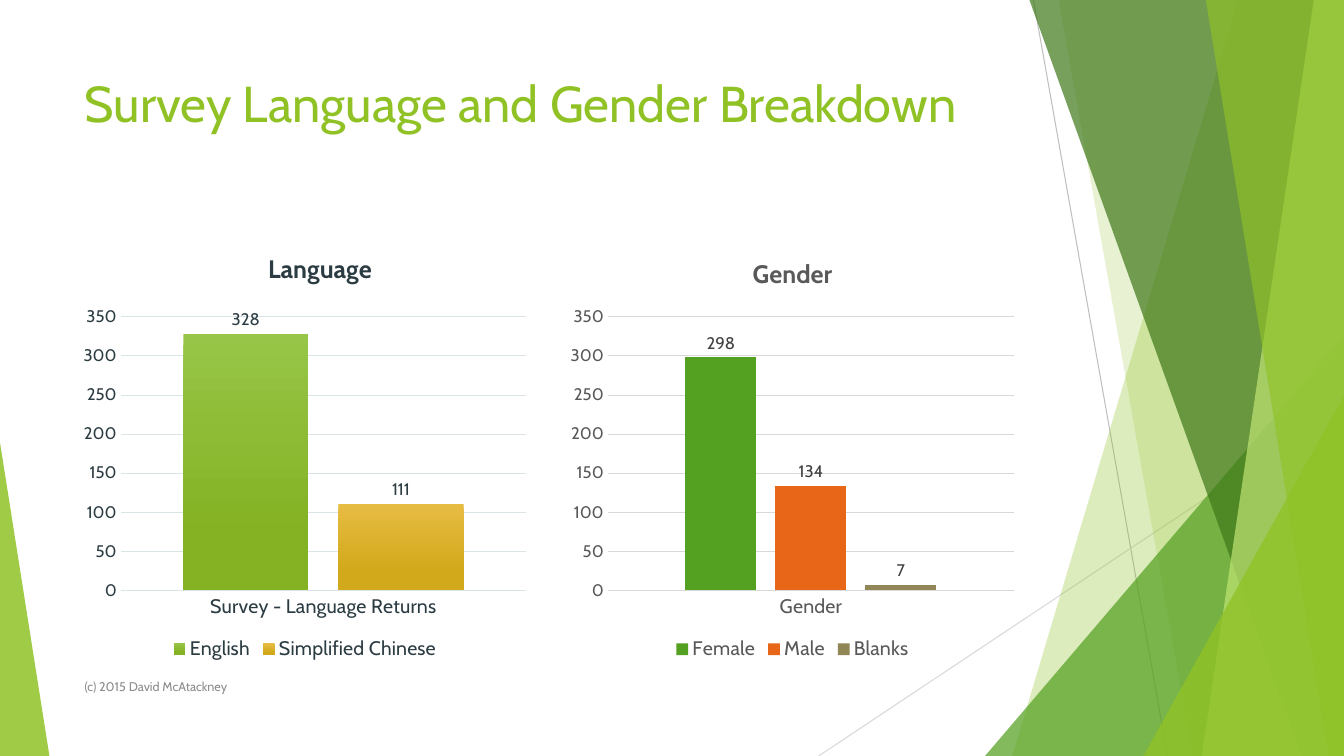
from lxml import etree
from pptx import Presentation, util as u
from pptx.chart.data import CategoryChartData
from pptx.dml.color import RGBColor
from pptx.enum import chart as ch, shapes, text
from pptx.oxml.ns import qn

FONT = "Cabin"
COLORS = {
    "lime": "90C226", "green": "54A021", "forest": "3F7819", "pale": "C0E474",
    "line_dark": "BFBFBF", "line": "D9D9D9", "grid_blue": "DBE4E7",
    "slate": "2C3C43", "gray": "595959", "label": "404040", "footer": "8C8C8C",
    "lime_top": "97C547", "lime_low": "84B223", "gold_top": "E7BC43",
    "gold_low": "D2A91B", "orange": "E76618", "olive": "918655",
}


def rgb(name):
    """Return the named palette colour."""
    return RGBColor.from_string(COLORS[name])


def set_font(font, color, **fmt):
    """Apply the deck font, a colour and further format values."""
    for key, value in {"name": FONT, **fmt}.items():
        setattr(font, key, value)
    font.color.rgb = rgb(color)


def add_text(s, box, words, color, size, anchor):
    """Place one line of text in the box."""
    tf = s.shapes.add_textbox(*map(u.Inches, box)).text_frame
    for key, value in {"word_wrap": True, "vertical_anchor": anchor}.items():
        setattr(tf, key, value)
    r = tf.paragraphs[0].add_run()
    r.text = words
    set_font(r.font, color, size=u.Pt(size))


def paint(sp, color, alpha):
    """Fill a facet with a see-through colour and no outline."""
    sp.shadow.inherit = False
    sp.line.fill.background()
    sp.fill.solid()
    sp.fill.fore_color.rgb = rgb(color)
    clr = sp._element.spPr.find(".//" + qn("a:srgbClr"))
    etree.SubElement(clr, qn("a:alpha")).set("val", str(alpha * 1000))


def add_facets(s, box):
    """Draw the thin lines and overlapping green facets at the slide edges."""
    x, y, w, h = box
    for x1, y1, x2, color in ((10.25, 0, 11.58, "line_dark"), (w, 4.03, 8.12, "line")):
        line = s.shapes.add_connector(
            shapes.MSO_CONNECTOR.STRAIGHT,
            *map(u.Inches, (x + x1, y + y1, x + x2, y + h)))
        line.line.color.rgb = rgb(color)
        line.line.width = u.Pt(0.75)
        etree.SubElement(line._element.spPr, qn("a:effectLst"))

    def slab(top, bottom, color, alpha):
        """Draw a facet from the top edge to the bottom, closed on the right."""
        pts = [(u.Inches(x + px), u.Inches(y + py))
               for px, py in ((top, 0), (w, 0), (w, h), (bottom, h))]
        fb = s.shapes.build_freeform(*pts[0])
        fb.add_line_segments(pts[1:], close=True)
        paint(fb.convert_to_shape(), color, alpha)

    def corner(left, width, height, tip, color, alpha):
        """Draw a right triangle standing on the bottom edge."""
        sp = s.shapes.add_shape(
            shapes.MSO_SHAPE.ISOSCELES_TRIANGLE,
            *map(u.Inches, (x + left, y + h - height, width, height)))
        sp.adjustments[0] = tip
        paint(sp, color, alpha)

    slab(12.28, 10.04, "lime", 30)
    slab(10.5, 11.83, "lime", 20)
    corner(9.77, 3.56, 4.17, 1, "green", 72)
    slab(10.21, 12.91, "forest", 70)
    slab(13.03, 11.92, "pale", 70)
    slab(11.96, 13.18, "lime", 65)
    corner(11.34, 1.99, 3.57, 1, "lime", 80)
    corner(0, 0.49, 3.11, 0, "lime", 85)


def set_layout(element, **fractions):
    """Pin a chart part to fractions of the chart area."""
    for old in element.findall(qn("c:layout")):
        element.remove(old)
    layout = etree.Element(qn("c:layout"))
    manual = etree.SubElement(layout, qn("c:manualLayout"))
    if "w" in fractions:
        etree.SubElement(manual, qn("c:layoutTarget")).set("val", "inner")
    for key in ("xMode", "yMode"):
        etree.SubElement(manual, qn("c:" + key)).set("val", "edge")
    for key, value in fractions.items():
        etree.SubElement(manual, qn("c:" + key)).set("val", str(value))
    tx = element.find(qn("c:tx"))
    element.insert(0 if tx is None else 1, layout)


def fill_bar(fill, colors):
    """Fill a bar with one colour, or a gradient from top to bottom."""
    if len(colors) == 1:
        fill.solid()
        fill.fore_color.rgb = rgb(colors[0])
        return
    fill.gradient()
    fill.gradient_angle = 270
    for stop, color, pos in zip(fill.gradient_stops, colors, (0, 0.78)):
        stop.color.rgb = rgb(color)
        stop.position = pos


def add_bars(s, box, title, category, series, ink, label_ink, grid, gap, overlap,
             title_at=None):
    """Place a clustered column chart with title, value labels and legend."""
    data = CategoryChartData()
    data.categories = [category]
    for name, value, _ in series:
        data.add_series(name, [value])
    chart = s.shapes.add_chart(
        ch.XL_CHART_TYPE.COLUMN_CLUSTERED, *map(u.Inches, box), data).chart
    set_font(chart.font, ink, size=u.Pt(10))

    chart.has_title = True
    tf = chart.chart_title.text_frame
    tf.text = title
    set_font(tf.paragraphs[0].runs[0].font, ink, size=u.Pt(18), bold=True)
    chart.chart_title.include_in_layout = False
    if title_at:
        set_layout(chart.chart_title._element, x=title_at[0], y=title_at[1])

    chart.has_legend = True
    legend = chart.legend
    legend.position = ch.XL_LEGEND_POSITION.BOTTOM
    legend.include_in_layout = False
    set_font(legend.font, ink, size=u.Pt(14))

    cat, val = chart.category_axis, chart.value_axis
    for axis, size in ((cat, 14), (val, 12)):
        axis.major_tick_mark = axis.minor_tick_mark = ch.XL_TICK_MARK.NONE
        set_font(axis.tick_labels.font, ink, size=u.Pt(size))
    for key, value in {"minimum_scale": 0, "maximum_scale": 350,
                       "major_unit": 50, "has_major_gridlines": True}.items():
        setattr(val, key, value)
    val.format.line.fill.background()
    for line in (cat.format.line, val.major_gridlines.format.line):
        line.color.rgb = rgb(grid)
        line.width = u.Pt(0.75)

    plot = chart.plots[0]
    for key, value in {"gap_width": gap, "overlap": overlap,
                       "vary_by_categories": False}.items():
        setattr(plot, key, value)
    for bar, (_, _, colors) in zip(plot.series, series):
        fill_bar(bar.format.fill, colors)
        labels = bar.data_labels
        labels.show_value = True
        labels.position = ch.XL_LABEL_POSITION.OUTSIDE_END
        set_font(labels.font, label_ink, size=u.Pt(12))
    set_layout(chart._chartSpace.chart.plotArea, x=0.1, y=0.185, w=0.88, h=0.64)


def survey_slide(prs):
    """Build the slide with the two survey charts."""
    s = prs.slides.add_slide(prs.slide_layouts[6])
    add_facets(s, (0, 0, 13.33, 7.5))
    add_text(s, (0.74, 0.67, 9.4, 1.44), "Survey Language and Gender Breakdown",
             "lime", 36, text.MSO_ANCHOR.TOP)
    add_bars(s, (0.74, 2.36, 4.57, 4.24), "Language", "Survey - Language Returns",
             [("English", 328, ["lime_top", "lime_low"]),
              ("Simplified Chinese", 111, ["gold_top", "gold_low"])],
             "slate", "slate", "grid_blue", 100, -24, (0.41, 0.02))
    add_bars(s, (5.57, 2.36, 4.58, 4.24), "Gender", "Gender",
             [("Female", 298, ["green"]), ("Male", 134, ["orange"]),
              ("Blanks", 7, ["olive"])],
             "gray", "label", "line", 219, -27)
    add_text(s, (0.74, 6.61, 6.89, 0.4), "(c) 2015 David McAtackney",
             "footer", 9, text.MSO_ANCHOR.MIDDLE)


def main():
    """Create the deck and save it."""
    prs = Presentation()
    prs.slide_width, prs.slide_height = u.Inches(13.33), u.Inches(7.5)
    survey_slide(prs)
    prs.save("out.pptx")


if __name__ == "__main__":
    main()
